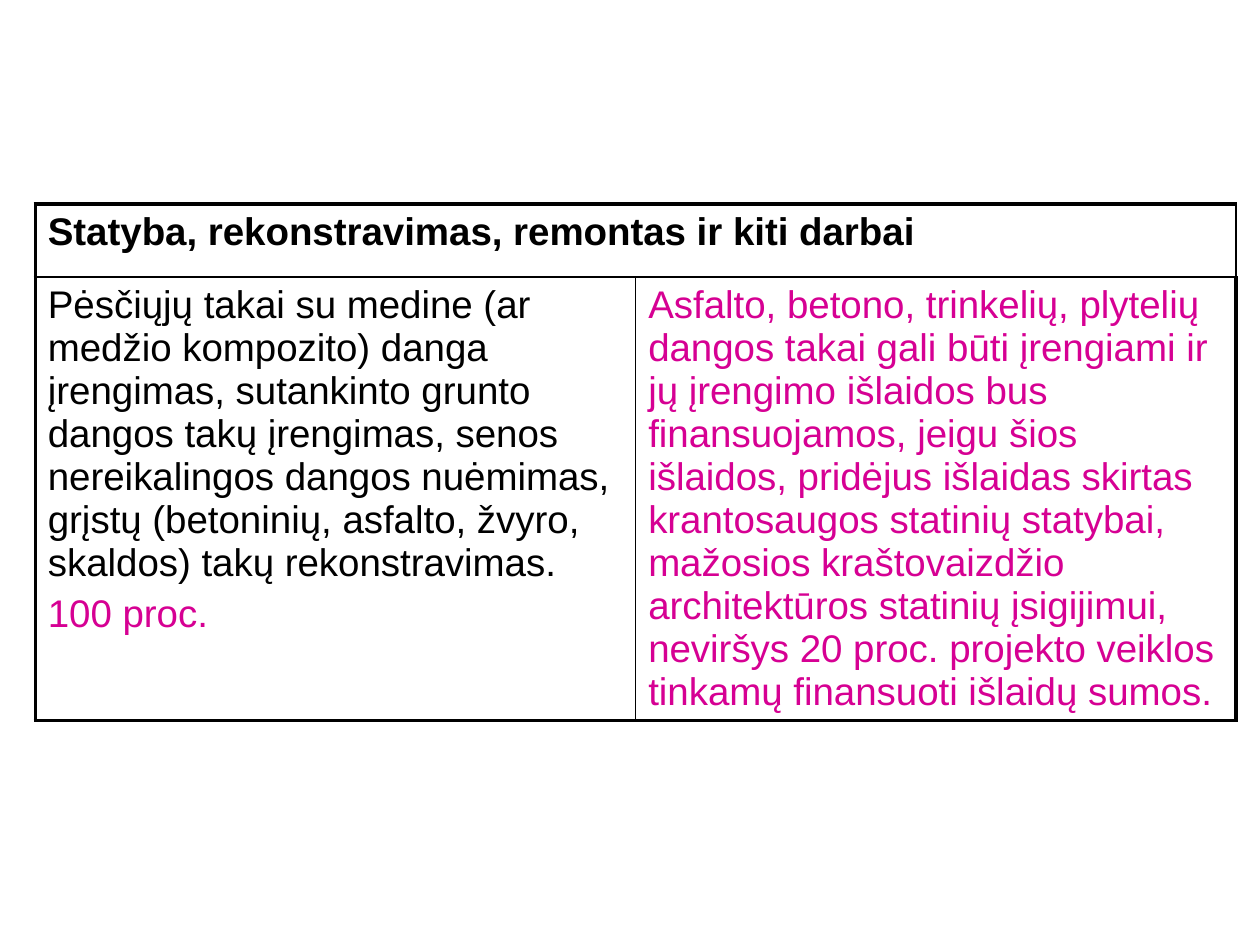
import pptx
import pptx.dml.color
import pptx.oxml
import pptx.oxml.ns
import pptx.util
from pptx.util import Inches, Pt

BLACK = pptx.dml.color.RGBColor(0x00, 0x00, 0x00)
MAGENTA = pptx.dml.color.RGBColor(0xD6, 0x00, 0x93)
FONT, SIZE = "Arial", 22
OUTER, INNER = 2.25, 1

HEADING = "Statyba, rekonstravimas, remontas ir kiti darbai"
WORKS = (
    "Pėsčiųjų takai su medine (ar medžio kompozito) danga įrengimas, "
    "sutankinto grunto dangos takų įrengimas, senos nereikalingos dangos "
    "nuėmimas, grįstų (betoninių, asfalto, žvyro, skaldos) takų "
    "rekonstravimas."
)
SHARE = "100 proc."
CONDITION = (
    "Asfalto, betono, trinkelių, plytelių dangos takai gali būti įrengiami ir "
    "jų įrengimo išlaidos bus finansuojamos, jeigu šios išlaidos, pridėjus "
    "išlaidas skirtas krantosaugos statinių statybai, mažosios kraštovaizdžio "
    "architektūros statinių įsigijimui, neviršys 20 proc. projekto veiklos "
    "tinkamų finansuoti išlaidų sumos."
)


def set_borders(cell, widths):
    """Draw black borders; widths maps L, R, T, B (in that order) to points."""
    tcPr = cell._tc.get_or_add_tcPr()
    for side, width in widths.items():
        tcPr.append(pptx.oxml.parse_xml(
            f'<a:ln{side} {pptx.oxml.ns.nsdecls("a")} w="{Pt(width)}">'
            f'<a:solidFill><a:srgbClr val="{BLACK}"/></a:solidFill>'
            f'</a:ln{side}>'))


def write_cell(cell, paragraphs, bold=False):
    tf = cell.text_frame
    for i, (text, color) in enumerate(paragraphs):
        p = tf.add_paragraph() if i else tf.paragraphs[0]
        p.text = text
        p.font.name, p.font.size, p.font.bold = FONT, Pt(SIZE), bold
        p.font.color.rgb = color
        if i:
            p.space_before = Pt(0.2 * SIZE)


def add_works_table(slide, left, top, width, row_heights):
    rows, cols = len(row_heights), 2
    table = slide.shapes.add_table(
        rows, cols, left, top, width, sum(row_heights)).table
    table.first_row = table.horz_banding = False
    for row, height in zip(table.rows, row_heights):
        row.height = height
    for r in range(rows):
        for c in range(cols):
            cell = table.cell(r, c)
            set_borders(cell, {
                "L": OUTER if c == 0 else INNER,
                "R": OUTER if c == cols - 1 else INNER,
                "T": OUTER if r == 0 else INNER,
                "B": OUTER if r == rows - 1 else INNER,
            })
            cell.fill.background()
    table.cell(0, 0).merge(table.cell(0, cols - 1))
    write_cell(table.cell(0, 0), [(HEADING, BLACK)], bold=True)
    write_cell(table.cell(1, 0), [(WORKS, BLACK), (SHARE, MAGENTA)])
    write_cell(table.cell(1, 1), [(CONDITION, MAGENTA)])


def main():
    prs = pptx.Presentation()
    prs.slide_width, prs.slide_height = Inches(10), Inches(7.5)
    slide = prs.slides.add_slide(prs.slide_layouts[6])
    add_works_table(slide, Inches(0.28), Inches(1.62), Inches(9.53),
                    [Inches(0.58), Inches(3.52)])
    prs.save("out.pptx")


if __name__ == "__main__":
    main()
